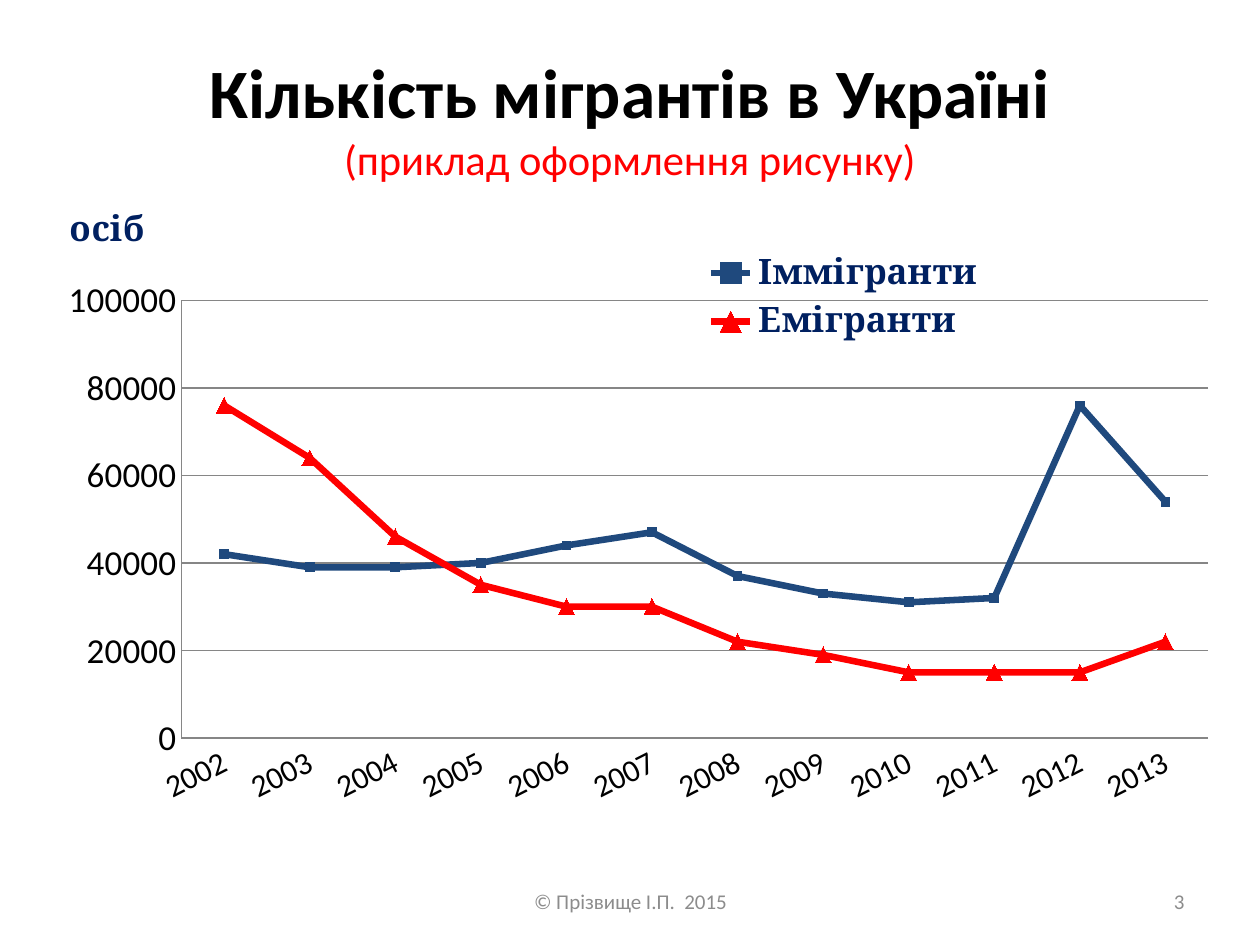
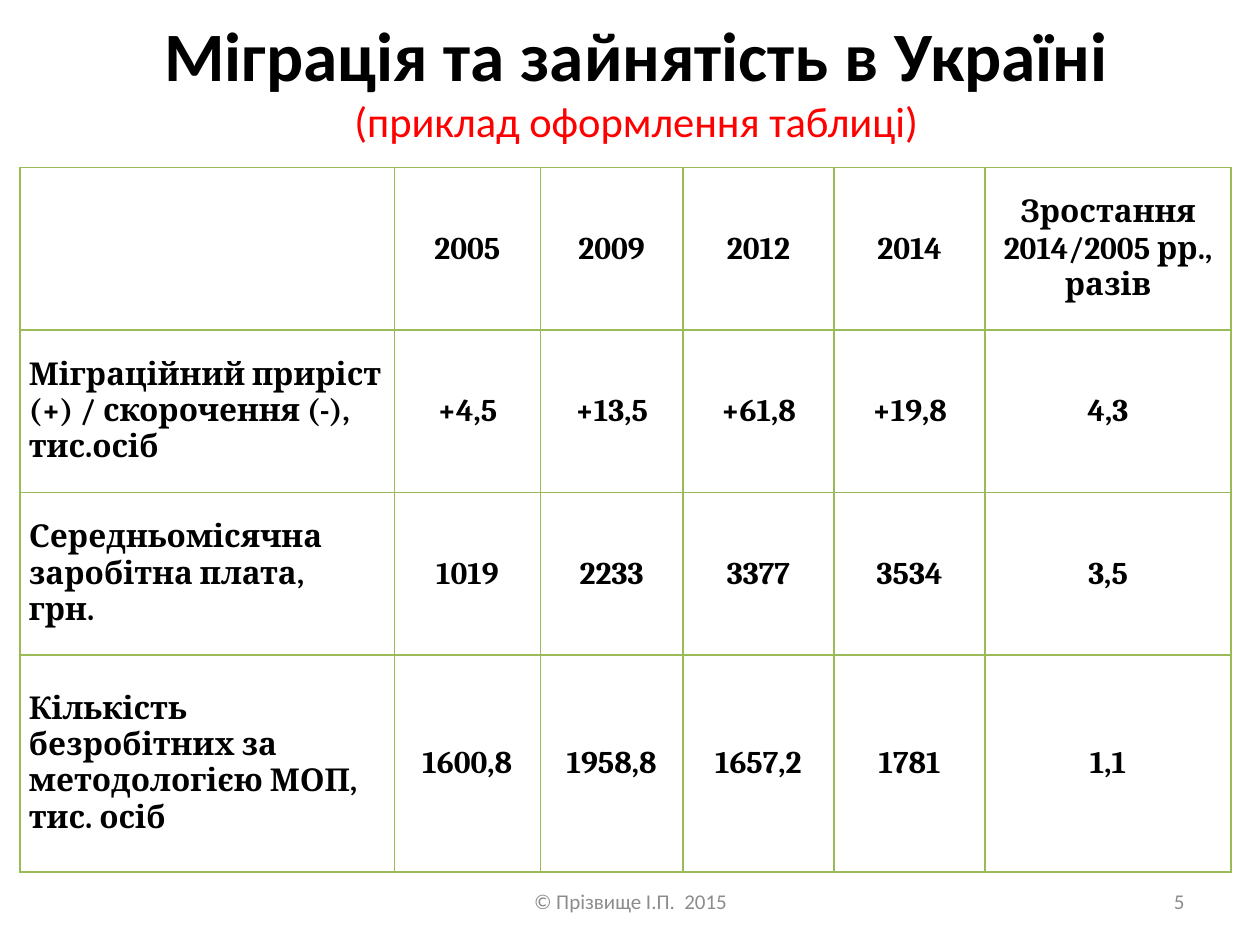
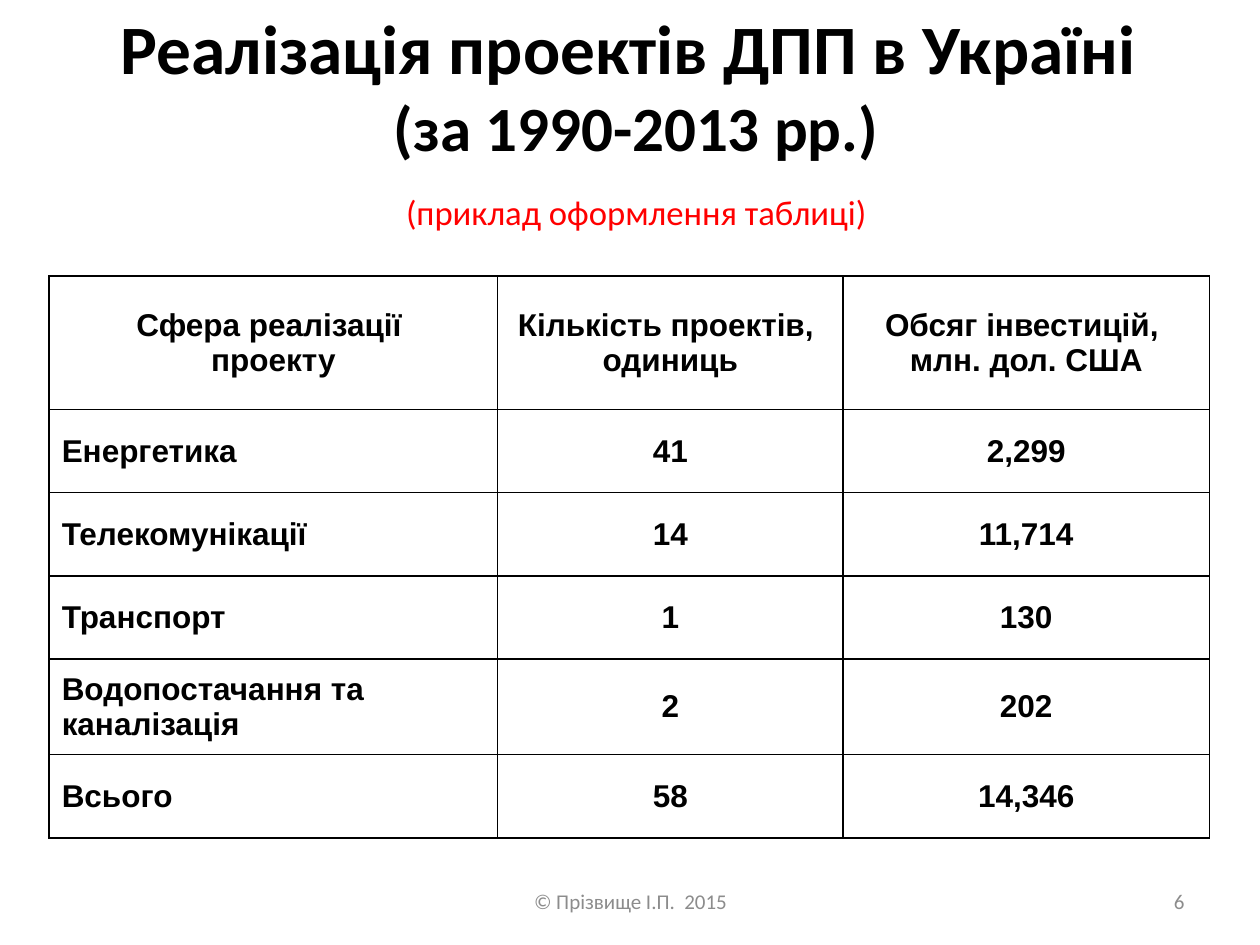
from lxml.etree import SubElement
from pptx import Presentation
from pptx.chart.data import CategoryChartData
from pptx.dml.color import RGBColor
from pptx.enum.chart import XL_CHART_TYPE as ChartType
from pptx.enum.chart import XL_LEGEND_POSITION as LegendPosition
from pptx.enum.chart import XL_MARKER_STYLE as Marker
from pptx.enum.chart import XL_TICK_MARK as TickMark
from pptx.enum.text import MSO_ANCHOR as Anchor
from pptx.enum.text import PP_ALIGN as Align
from pptx.oxml import parse_xml
from pptx.oxml.ns import nsdecls, qn
from pptx.util import Inches, Pt

BLACK = RGBColor(0x00, 0x00, 0x00)
RED = RGBColor(0xFF, 0x00, 0x00)
BLUE = RGBColor(0x1F, 0x49, 0x7D)
NAVY = RGBColor(0x00, 0x20, 0x60)
GREEN = RGBColor(0x9B, 0xBB, 0x59)
FOOTER_GRAY = RGBColor(0x8C, 0x8C, 0x8C)
GRID_GRAY = RGBColor(0x86, 0x86, 0x86)

BODY_FONT, SERIF_FONT, SANS_FONT = "Calibri", "Cambria", "Arial"
COLUMNS, ROWS = 100, 75
FOOTER = "© Прізвище І.П.  2015"


def style_font(font, size, color=BLACK, bold=False, name=BODY_FONT):
    font.name, font.size, font.bold = name, Pt(size), bold
    font.color.rgb = color


def place_part(element, index, **shares):
    """Fix a chart part at the given shares of the chart's size."""
    for layout in element.findall(qn("c:layout")):
        element.remove(layout)
    layout = parse_xml(f"<c:layout {nsdecls('c')}><c:manualLayout/></c:layout>")
    if "w" in shares and element.tag == qn("c:plotArea"):
        SubElement(layout[0], qn("c:layoutTarget"), val="inner")
    for mode in ("xMode", "yMode"):
        SubElement(layout[0], qn(f"c:{mode}"), val="edge")
    for key, share in shares.items():
        SubElement(layout[0], qn(f"c:{key}"), val=str(share))
    element.insert(index, layout)


class Deck:
    def __init__(self):
        self.presentation = Presentation()
        self.presentation.slide_width = Inches(10)
        self.presentation.slide_height = Inches(7.5)
        self.slide = None

    def x(self, columns):
        return round(self.presentation.slide_width * columns / COLUMNS)

    def y(self, rows):
        return round(self.presentation.slide_height * rows / ROWS)

    def box(self, left, top, width, height):
        return self.x(left), self.y(top), self.x(width), self.y(height)

    def add_slide(self, number):
        layout = self.presentation.slide_layouts[6]
        self.slide = self.presentation.slides.add_slide(layout)
        self.text((34.2, 69.5, 31.7, 4), [(FOOTER, 12, FOOTER_GRAY, False, 0)])
        self.text((71.7, 69.5, 23.3, 4),
                  [(str(number), 12, FOOTER_GRAY, False, 0)], Align.RIGHT)

    def text(self, area, lines, align=Align.CENTER):
        frame = self.slide.shapes.add_textbox(*self.box(*area)).text_frame
        frame.word_wrap = True
        frame.vertical_anchor = Anchor.MIDDLE
        for index, (line, size, color, bold, gap) in enumerate(lines):
            paragraph = frame.add_paragraph() if index else frame.paragraphs[0]
            paragraph.text = line
            paragraph.alignment = align
            paragraph.space_before = Pt(gap)
            style_font(paragraph.font, size, color, bold)

    def title(self, left, top, heading, note, second_line=None):
        lines = [(heading, 39.6, BLACK, True, 0)]
        if second_line:
            lines += [(second_line, 36, BLACK, True, 0), (note, 19.8, RED, False, 15.4)]
        else:
            lines.append((note, 24.3, RED, False, 0))
        self.text((left, top, 90, 12.5), lines)

    def line_chart(self, area, categories, series_styles, unit):
        data = CategoryChartData()
        data.categories = categories
        for name, values, *_ in series_styles:
            data.add_series(name, values)
        chart = self.slide.shapes.add_chart(
            ChartType.LINE_MARKERS, *self.box(*area), data).chart
        chart.has_title = False
        style_font(chart.font, 10)

        # Series
        for series, style in zip(chart.plots[0].series, series_styles):
            _, _, color, marker, size = style
            series.smooth = False
            series.format.line.color.rgb = color
            series.format.line.width = Pt(3.75)
            series.marker.style, series.marker.size = marker, size
            series.marker.format.fill.solid()
            series.marker.format.fill.fore_color.rgb = color
            series.marker.format.line.color.rgb = color

        # Axes
        years, people = chart.category_axis, chart.value_axis
        for axis, size in ((years, 18), (people, 20)):
            axis.major_tick_mark = axis.minor_tick_mark = TickMark.NONE
            axis.format.line.color.rgb = GRID_GRAY
            style_font(axis.tick_labels.font, size)
        labels = years._element.find(qn("c:txPr"))
        labels.find(qn("a:bodyPr")).set("rot", str(-27 * 60000))
        people.minimum_scale, people.maximum_scale = 0, 100000
        people.major_unit = 20000
        people.major_gridlines.format.line.color.rgb = GRID_GRAY
        people.tick_labels.number_format = "0"
        people.tick_labels.number_format_is_linked = False

        # Unit above the value axis
        frame = people.axis_title.text_frame
        frame.text = unit
        style_font(frame.paragraphs[0].font, 20, NAVY, True, SERIF_FONT)
        frame._txBody.find(qn("a:bodyPr")).set("rot", "0")
        place_part(people.axis_title._element, 1, x=0.05, y=0.07)

        # Legend and plot area
        chart.has_legend = True
        chart.legend.position = LegendPosition.RIGHT
        chart.legend.include_in_layout = False
        style_font(chart.legend.font, 20, NAVY, True, SERIF_FONT)
        place_part(chart.legend._element, 1, x=0.55, y=0.13, w=0.24, h=0.14)
        plot_area = chart._chartSpace.chart.plotArea
        place_part(plot_area, 0, x=0.144, y=0.204, w=0.815, h=0.584)

    def table(self, area, widths, heights, rows, font, border, inset=None, hanging=0):
        table = self.slide.shapes.add_table(
            len(rows), len(widths), *self.box(*area)).table
        table.first_row = table.horz_banding = False
        for column, width in zip(table.columns, widths):
            column.width = self.x(width)
        for row, height in zip(table.rows, heights):
            row.height = self.y(height)
        for row_index, row in enumerate(rows):
            for column_index, text in enumerate(row):
                cell = table.cell(row_index, column_index)
                cell.text = text
                cell.vertical_anchor = Anchor.MIDDLE
                if inset is not None:
                    cell.margin_left = cell.margin_right = self.x(inset)
                    cell.margin_top = cell.margin_bottom = 0
                centred = row_index == 0 or column_index > 0
                for paragraph in cell.text_frame.paragraphs:
                    paragraph.alignment = Align.CENTER if centred else Align.LEFT
                    style_font(paragraph.font, 18, BLACK, True, font)
                    # A long label wraps flush with its first line
                    if hanging and (centred or len(text) < 20):
                        properties = paragraph._p.get_or_add_pPr()
                        properties.set("marL", str(self.x(hanging)))
                        properties.set("indent", str(-self.x(hanging)))
                self.cell_border(cell, border)

    @staticmethod
    def cell_border(cell, color):
        cell.fill.background()
        properties = cell._tc.get_or_add_tcPr()
        for index, side in enumerate("LRTB"):
            properties.insert(index, parse_xml(
                f'<a:ln{side} {nsdecls("a")} w="{Pt(1)}"><a:solidFill>'
                f'<a:srgbClr val="{color}"/></a:solidFill></a:ln{side}>'))


def main():
    deck = Deck()

    # Migrants by year
    deck.add_slide(3)
    deck.line_chart(
        (0, 11.7, 100, 59.5),
        [str(year) for year in range(2002, 2014)],
        [("Іммігранти",
          [42000, 39000, 39000, 40000, 44000, 47000,
           37000, 33000, 31000, 32000, 76000, 54000], BLUE, Marker.SQUARE, 5),
         ("Емігранти",
          [76000, 64000, 46000, 35000, 30000, 30000,
           22000, 19000, 15000, 15000, 15000, 22000], RED, Marker.TRIANGLE, 9)],
        "осіб")
    deck.title(5, 3, "Кількість мігрантів в Україні", "(приклад оформлення рисунку)")

    # Migration and employment
    deck.add_slide(5)
    deck.title(5.5, 0, "Міграція та зайнятість в Україні", "(приклад оформлення таблиці)")
    deck.table(
        (1.6, 13.3, 96.1, 55.9),
        [29.7, 11.6, 11.3, 12, 12, 19.5],
        [12.9, 12.9, 12.9, 17.2],
        [["", "2005", "2009", "2012", "2014", "Зростання\n2014/2005 рр.,\nразів"],
         ["Міграційний приріст (+) / скорочення (-),\nтис.осіб",
          "+4,5", "+13,5", "+61,8", "+19,8", "4,3"],
         ["Середньомісячна заробітна плата,\nгрн.",
          "1019", "2233", "3377", "3534", "3,5"],
         ["Кількість безробітних за методологією МОП, тис. осіб",
          "1600,8", "1958,8", "1657,2", "1781", "1,1"]],
        SERIF_FONT, GREEN, inset=0.7)

    # Partnership projects
    deck.add_slide(6)
    deck.title(5.5, 3.2, "Реалізація проектів ДПП в Україні ",
               "(приклад оформлення таблиці)", "(за 1990-2013 рр.)")
    deck.table(
        (3.9, 21.9, 92.2, 44.5),
        [35.6, 27.4, 29.1],
        [10.6, 6.6, 6.6, 6.6, 7.6, 6.6],
        [["Сфера реалізації \nпроекту", "Кількість проектів, \nодиниць",
          "Обсяг інвестицій, \nмлн. дол. США"],
         ["Енергетика", "41", "2,299"],
         ["Телекомунікації", "14", "11,714"],
         ["Транспорт", "1", "130"],
         ["Водопостачання та каналізація", "2", "202"],
         ["Всього", "58", "14,346"]],
        SANS_FONT, BLACK, hanging=3.8)

    deck.presentation.save("out.pptx")


if __name__ == "__main__":
    main()
